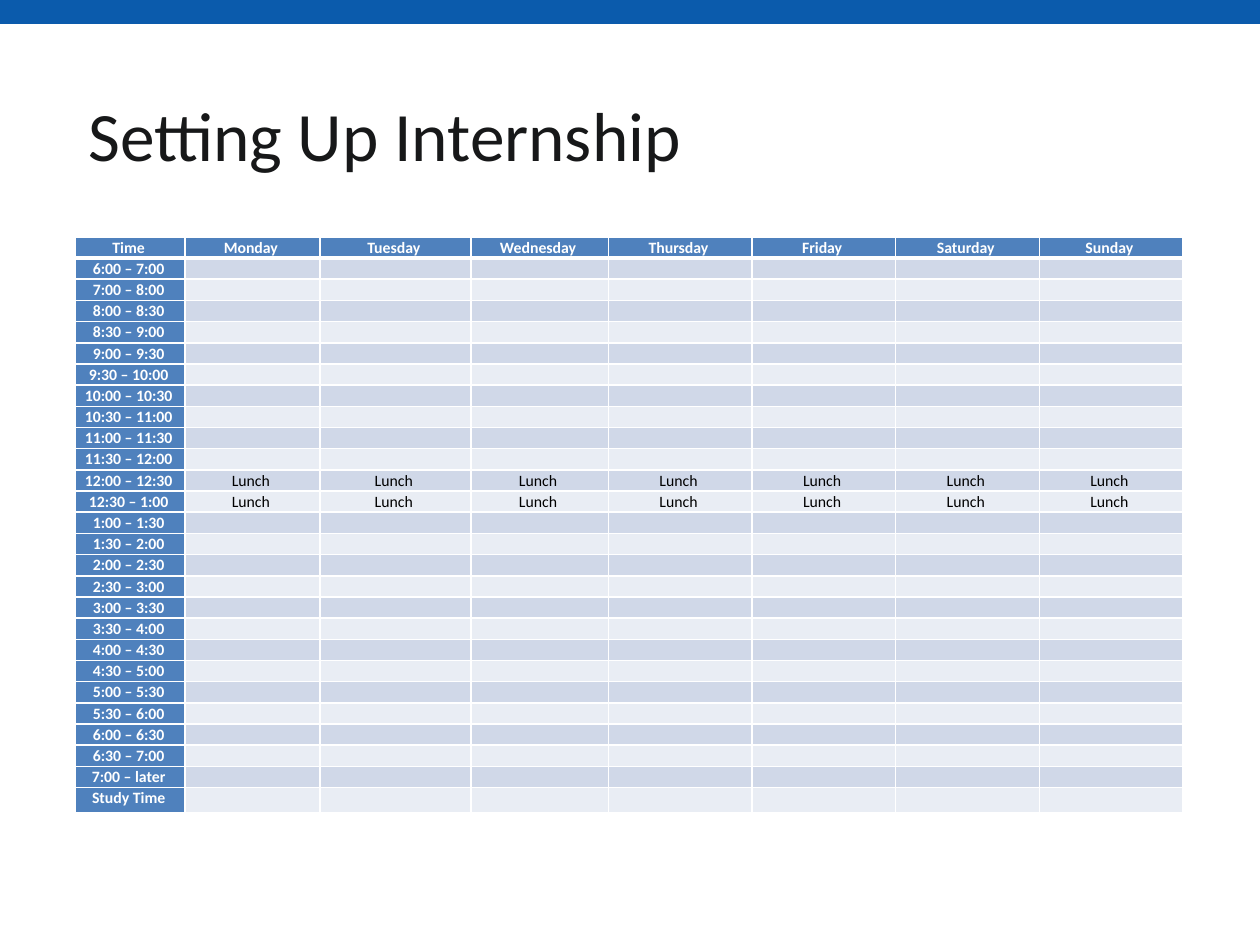
from dataclasses import dataclass
from itertools import pairwise

from lxml.etree import SubElement
from pptx import Presentation
from pptx.dml.color import RGBColor as RGB
from pptx.enum.shapes import MSO_SHAPE as Shape
from pptx.enum.text import MSO_ANCHOR as Anchor, PP_ALIGN as Align
from pptx.oxml.ns import qn
from pptx.util import Inches, Pt


@dataclass(frozen=True)
class Theme:
    font: str = "Calibri"
    title_size: float = 39.6
    table_size: float = 9
    bar: RGB = RGB(0x0B, 0x5B, 0xAC)
    title: RGB = RGB(0x17, 0x18, 0x19)
    header: RGB = RGB(0x4F, 0x81, 0xBD)
    bands: tuple = (RGB(0xE9, 0xED, 0xF4), RGB(0xD0, 0xD8, 0xE8))
    light: RGB = RGB(0xFF, 0xFF, 0xFF)
    dark: RGB = RGB(0x00, 0x00, 0x00)


theme = Theme()


def add_border(cell, side, width):
    line = SubElement(cell._tc.get_or_add_tcPr(), qn(f"a:ln{side}"), w=str(Pt(width)))
    fill = SubElement(line, qn("a:solidFill"))
    SubElement(fill, qn("a:srgbClr"), val=str(theme.light))


def style_font(font, size, color, bold=False):
    font.name = theme.font
    font.size = Pt(size)
    font.color.rgb = color
    font.bold = bold


presentation = Presentation()
presentation.slide_width = Inches(10)
presentation.slide_height = Inches(7.5)
slide = presentation.slides.add_slide(presentation.slide_layouts[5])

# Top bar
bar = slide.shapes.add_shape(Shape.RECTANGLE, 0, 0, Inches(10), Inches(0.19))
bar.shadow.inherit = False
bar.fill.solid()
bar.fill.fore_color.rgb = theme.bar
bar.line.fill.background()

# Title
title = slide.shapes.title
title.left, title.top = Inches(0.6), Inches(0.63)
title.width, title.height = Inches(8.81), Inches(0.81)
title.text_frame.text = "Setting Up Internship"
title.text_frame.vertical_anchor = Anchor.BOTTOM
paragraph = title.text_frame.paragraphs[0]
paragraph.alignment = Align.LEFT
style_font(paragraph.font, theme.title_size, theme.title)

# Schedule contents: each slot runs from one time to the next
days = ["Monday", "Tuesday", "Wednesday", "Thursday", "Friday", "Saturday", "Sunday"]
times = (
    "6:00 7:00 8:00 8:30 9:00 9:30 10:00 10:30 11:00 11:30 12:00 12:30 1:00 1:30 "
    "2:00 2:30 3:00 3:30 4:00 4:30 5:00 5:30 6:00 6:30 7:00 later"
).split()
rows = [["Time", *days]]
for start, end in pairwise(times):
    entry = "Lunch" if start in ("12:00", "12:30") else ""
    rows.append([f"{start} – {end}"] + [entry] * len(days))
rows.append(["Study Time"] + [""] * len(days))

# Schedule table
column_widths = [0.87, 1.07, 1.2, 1.09, 1.14, 1.14, 1.14, 1.14]
table_height, last_height = Inches(4.58), Inches(0.2)
table = slide.shapes.add_table(
    len(rows), len(column_widths), Inches(0.6), Inches(1.88), Inches(8.81), table_height
).table
for column, width in zip(table.columns, column_widths):
    column.width = Inches(width)
for row in table.rows:
    row.height = (table_height - last_height) // (len(rows) - 1)
table.rows[len(rows) - 1].height = last_height

for row_index, entries in enumerate(rows):
    for column_index, entry in enumerate(entries):
        cell = table.cell(row_index, column_index)
        is_header = row_index == 0 or column_index == 0
        cell.margin_left = cell.margin_right = Inches(0.01)
        cell.margin_top = cell.margin_bottom = 0
        for side in "LRTB":
            under_header = (row_index, side) in ((0, "B"), (1, "T"))
            add_border(cell, side, 3 if under_header else 1)
        cell.fill.solid()
        cell.fill.fore_color.rgb = theme.header if is_header else theme.bands[row_index % 2]

        paragraph = cell.text_frame.paragraphs[0]
        paragraph.alignment = Align.CENTER
        paragraph.line_spacing = 1.07
        color = theme.light if is_header else theme.dark
        style_font(paragraph.font, theme.table_size, color, is_header)
        if entry:
            paragraph.add_run().text = f"{entry} "
        else:
            # Small end mark keeps empty cells from stretching the row
            SubElement(paragraph._p, qn("a:endParaRPr"), sz=str(int(theme.table_size * 100)))

presentation.save("out.pptx")
